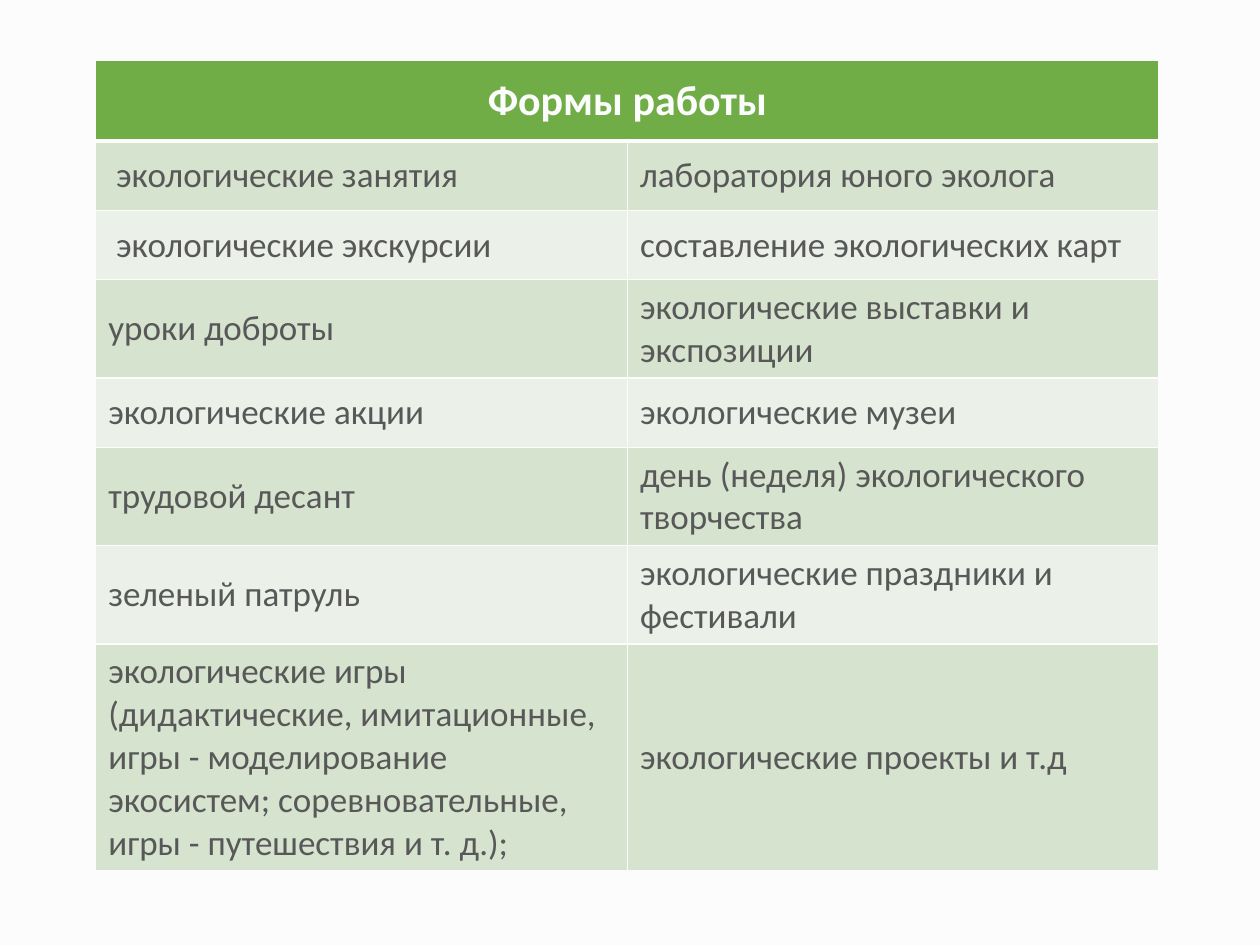
from dataclasses import dataclass

from lxml import etree
from pptx import Presentation
from pptx.dml.color import RGBColor
from pptx.enum import text
from pptx.oxml import ns
from pptx.util import Inches, Pt


@dataclass(frozen=True)
class Theme:
    font: str = "Calibri"
    background: str = "FCFCFC"
    header: str = "70AD47"
    bands: tuple = ("D5E3CF", "EBF1E9")
    body_text: str = "585858"
    header_size: int = 24
    body_size: int = 20
    border: int = 1
    header_rule: int = 3


THEME = Theme()
HEADING = "Формы работы"
WORK_FORMS = [
    (" экологические занятия", "лаборатория юного эколога"),
    (" экологические экскурсии", "составление экологических карт"),
    ("уроки доброты", "экологические выставки и экспозиции"),
    ("экологические акции", "экологические музеи"),
    ("трудовой десант", "день (неделя) экологического творчества"),
    ("зеленый патруль", "экологические праздники и фестивали"),
    ("экологические игры (дидактические, имитационные, игры - моделирование "
     "экосистем; соревновательные, игры - путешествия и т. д.);",
     "экологические проекты и т.д"),
]


def set_borders(cell, top=THEME.border, bottom=THEME.border):
    """Draw the four cell borders, placed before the fill as the schema asks."""
    properties = cell._tc.get_or_add_tcPr()
    widths = {"lnL": THEME.border, "lnR": THEME.border, "lnT": top, "lnB": bottom}
    for index, (side, width) in enumerate(widths.items()):
        line = etree.Element(ns.qn(f"a:{side}"), w=str(Pt(width)))
        fill = etree.SubElement(line, ns.qn("a:solidFill"))
        etree.SubElement(fill, ns.qn("a:srgbClr"), val=THEME.background)
        properties.insert(index, line)


def style_cell(cell, fill):
    cell.fill.solid()
    cell.fill.fore_color.rgb = RGBColor.from_string(fill)
    cell.vertical_anchor = text.MSO_ANCHOR.MIDDLE


def write_cell(cell, words, size, color, bold=False, align=text.PP_ALIGN.LEFT):
    paragraph = cell.text_frame.paragraphs[0]
    paragraph.alignment = align
    run = paragraph.add_run()
    run.text = words
    run.font.name = THEME.font
    run.font.size = Pt(size)
    run.font.bold = bold
    run.font.color.rgb = RGBColor.from_string(color)


def add_work_forms_table(slide, left, top, width, height):
    frame = slide.shapes.add_table(len(WORK_FORMS) + 1, 2, left, top, width, height)
    table = frame.table
    for row in table.rows:
        row.height = Inches(0.55)  # rows with longer text grow to fit
    table.rows[0].height = Inches(0.64)
    frame.height = height

    for cell in table.rows[0].cells:
        style_cell(cell, THEME.header)
        set_borders(cell, bottom=THEME.header_rule)
    heading = table.cell(0, 0)
    heading.merge(table.cell(0, 1))
    write_cell(heading, HEADING, THEME.header_size, THEME.background,
               bold=True, align=text.PP_ALIGN.CENTER)

    for row, forms in enumerate(WORK_FORMS, start=1):
        for column, words in enumerate(forms):
            cell = table.cell(row, column)
            style_cell(cell, THEME.bands[(row - 1) % 2])
            set_borders(cell, top=THEME.header_rule if row == 1 else THEME.border)
            write_cell(cell, words, THEME.body_size, THEME.body_text)


def main():
    presentation = Presentation()
    presentation.slide_width, presentation.slide_height = Inches(10), Inches(7.5)
    slide = presentation.slides.add_slide(presentation.slide_layouts[6])
    slide.background.fill.solid()
    slide.background.fill.fore_color.rgb = RGBColor.from_string(THEME.background)
    add_work_forms_table(slide, Inches(0.76), Inches(0.48), Inches(8.44), Inches(6.36))
    presentation.save("out.pptx")


if __name__ == "__main__":
    main()
